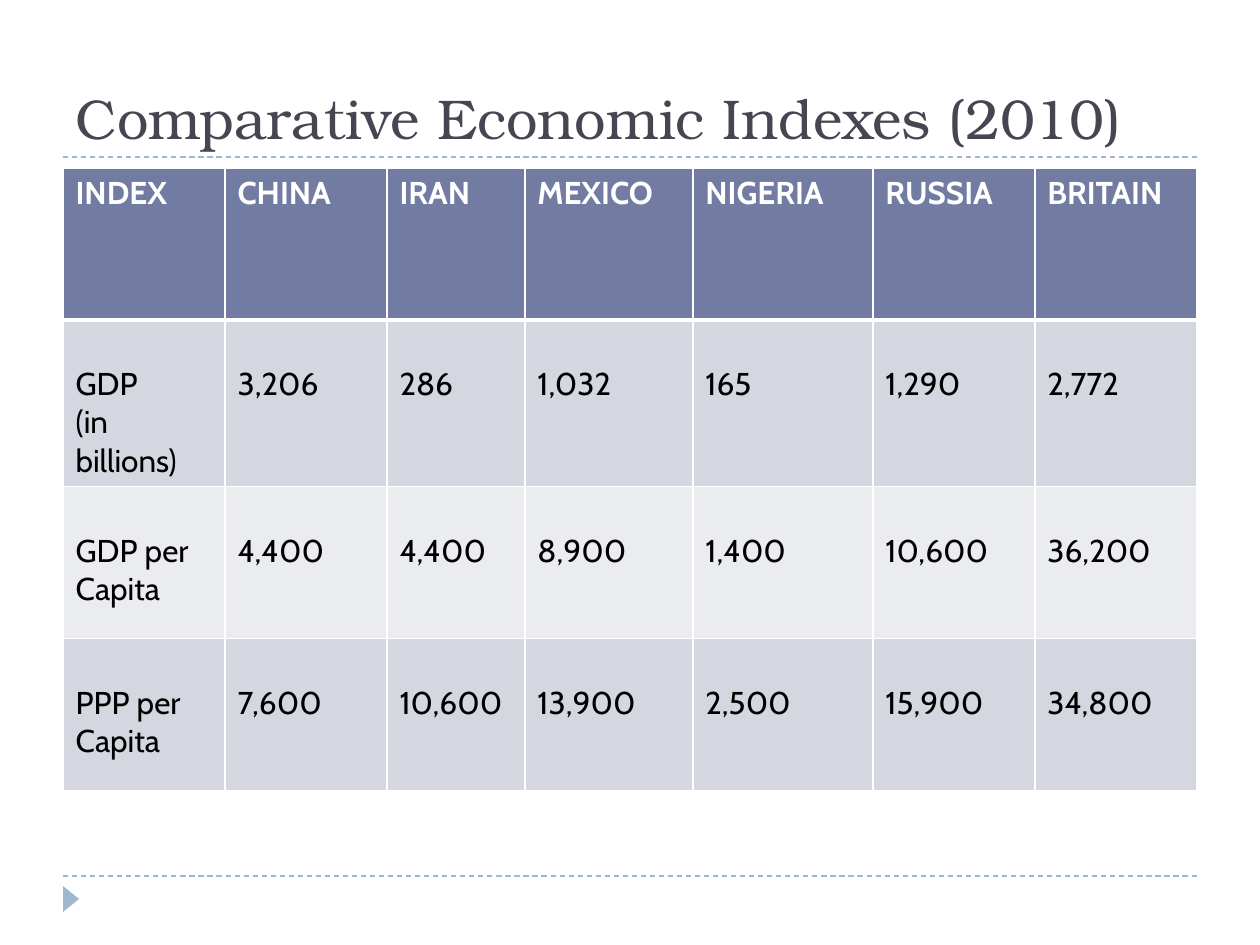
from lxml import etree
from pptx import Presentation
from pptx.dml.color import RGBColor
from pptx.enum.dml import MSO_LINE
from pptx.enum.shapes import MSO_CONNECTOR, MSO_SHAPE
from pptx.enum.text import MSO_ANCHOR, MSO_AUTO_SIZE, PP_ALIGN
from pptx.oxml.ns import qn
from pptx.util import Pt

DASH = MSO_LINE.DASH
STRAIGHT = MSO_CONNECTOR.STRAIGHT
TRIANGLE = MSO_SHAPE.ISOSCELES_TRIANGLE
BOTTOM = MSO_ANCHOR.BOTTOM
NO_FIT = MSO_AUTO_SIZE.NONE
LEFT = PP_ALIGN.LEFT

WHITE = RGBColor(0xFF, 0xFF, 0xFF)
BLACK = RGBColor(0, 0, 0)
INK = RGBColor(0x46, 0x46, 0x53)
SKY = RGBColor(0x9F, 0xB8, 0xCD)
SLATE = RGBColor(0x72, 0x7C, 0xA3)
BANDS = (RGBColor(0xD5, 0xD7, 0xE0), RGBColor(0xEB, 0xEC, 0xF0))

EDGE, WIDE = 63, 1134
COLS = (162, 162, 138, 168, 180, 162, 162)
ROWS = (152, 166, 152, 152)
DATA = (
    ("INDEX", "CHINA", "IRAN", "MEXICO", "NIGERIA", "RUSSIA", "BRITAIN"),
    ("GDP\n(in billions)", "3,206", "286", "1,032", "165", "1,290", "2,772"),
    ("GDP per Capita", "4,400", "4,400", "8,900", "1,400", "10,600", "36,200"),
    ("PPP per Capita", "7,600", "10,600", "13,900", "2,500", "15,900", "34,800"),
)


def px(*sizes):
    """Turn px into EMU, at 126 px to the inch."""
    return [round(size * 914400 / 126) for size in sizes]


class Page:
    """The current slide and the style of its elements."""
    serif = "TeX Gyre Bonum"
    sans = "Cabin"

    def __init__(self, slide):
        self.shapes = slide.shapes

    def label(self, frame, text, font, size, color, bold=False):
        frame.text = text
        for para in frame.paragraphs:
            para.alignment = LEFT
            for run in para.runs:
                run.font.name = font
                run.font.size = Pt(size)
                run.font.bold = bold
                run.font.color.rgb = color

    def rule(self, y):
        x1, top, x2 = px(EDGE, y, EDGE + WIDE)
        line = self.shapes.add_connector(STRAIGHT, x1, top, x2, top)
        line.line.color.rgb = SKY
        line.line.width = Pt(0.75)
        line.line.dash_style = DASH
        etree.SubElement(line._element.spPr, qn("a:effectLst"))

    def arrow(self, x, y, w, h):
        mark = self.shapes.add_shape(TRIANGLE, *px(x, y, w, h))
        mark.rotation = 90
        mark.shadow.inherit = False
        mark.fill.solid()
        mark.fill.fore_color.rgb = SKY
        mark.line.fill.background()

    def title(self, text, x, y, w, h):
        head = self.shapes.title
        head.left, head.top, head.width, head.height = px(x, y, w, h)
        frame = head.text_frame
        frame.auto_size = NO_FIT
        frame.word_wrap = True
        frame.vertical_anchor = BOTTOM
        self.label(frame, text, self.serif, 32, INK)

    def border(self, cell, base):
        """Draw white cell edges, the lower one base points wide."""
        props = cell._tc.get_or_add_tcPr()
        sides = (("L", 1), ("R", 1), ("T", 1), ("B", base))
        for spot, (side, size) in enumerate(sides):
            edge = etree.Element(qn(f"a:ln{side}"), w=str(Pt(size)))
            fill = etree.SubElement(edge, qn("a:solidFill"))
            etree.SubElement(fill, qn("a:srgbClr"), val=str(WHITE))
            props.insert(spot, edge)

    def table(self, data, x, y):
        box = px(x, y, sum(COLS), sum(ROWS))
        grid = self.shapes.add_table(len(data), len(COLS), *box).table
        for col, size in zip(grid.columns, px(*COLS)):
            col.width = size
        for row, size in zip(grid.rows, px(*ROWS)):
            row.height = size
        for r, line in enumerate(data):
            head = r == 0
            for c, text in enumerate(line):
                cell = grid.cell(r, c)
                cell.fill.solid()
                cell.fill.fore_color.rgb = SLATE if head else BANDS[(r - 1) % 2]
                cell.margin_top = px(6 if head else 45)[0]
                self.border(cell, 3 if head else 1)
                self.label(cell.text_frame, text, self.sans, 18,
                           WHITE if head else BLACK, head)


def main():
    deck = Presentation()
    deck.slide_width, deck.slide_height = px(1260, 945)
    page = Page(deck.slides.add_slide(deck.slide_layouts[5]))
    for y in (876, 157):
        page.rule(y)
    page.arrow(58, 891, 26, 16)
    page.title("Comparative Economic Indexes (2010)", EDGE, 21, WIDE, 136)
    page.table(DATA, EDGE, 168)
    deck.save("out.pptx")


if __name__ == "__main__":
    main()
